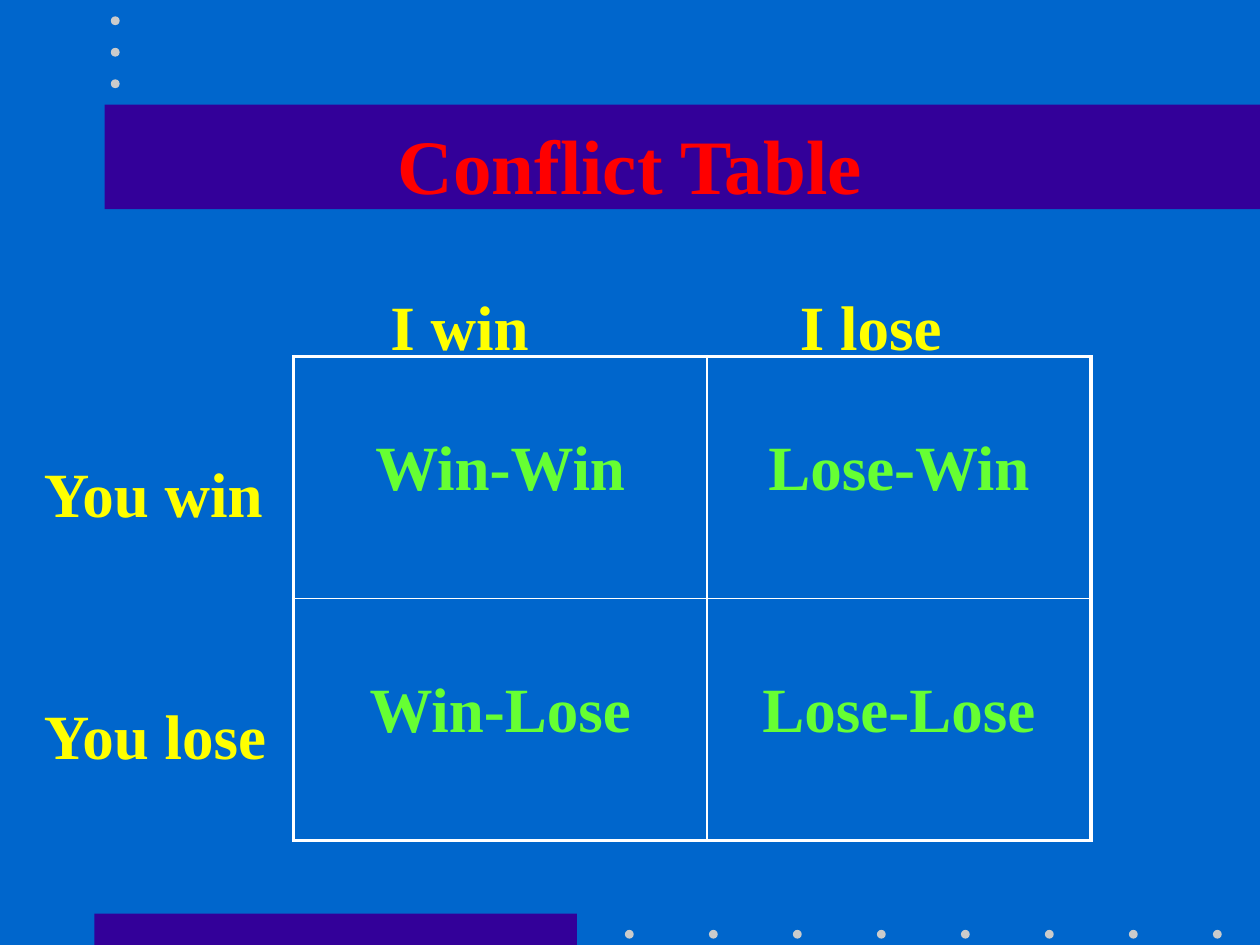
from pptx import Presentation
from pptx.util import Inches, Pt
from pptx.dml.color import RGBColor
from pptx.enum.shapes import MSO_SHAPE as Shape
from pptx.enum.text import MSO_ANCHOR as Anchor, PP_ALIGN as Align
from lxml.etree import fromstring

BLUE = RGBColor(0x00, 0x66, 0xCC)
PURPLE = RGBColor(0x33, 0x00, 0x99)
GRAY = RGBColor(0xCB, 0xCB, 0xCB)
RED = RGBColor(0xFF, 0x00, 0x00)
YELLOW = RGBColor(0xFF, 0xFF, 0x00)
GREEN = RGBColor(0x66, 0xFF, 0x33)
NS = "http://schemas.openxmlformats.org/drawingml/2006/main"

deck = Presentation()
deck.slide_width = Inches(10)
deck.slide_height = Inches(7.5)
slide = deck.slides.add_slide(deck.slide_layouts[6])
slide.background.fill.solid()
slide.background.fill.fore_color.rgb = BLUE
shapes = slide.shapes


def draw(kind, box, color):
    shape = shapes.add_shape(kind, *map(Inches, box))
    shape.shadow.inherit = False
    shape.fill.solid()
    shape.fill.fore_color.rgb = color
    shape.line.fill.background()


def write(frame, text, size, color, align):
    para = frame.paragraphs[0]
    para.text = text
    para.alignment = align
    font = para.font
    font.name = "Times New Roman"
    font.size = Pt(size)
    font.bold = True
    font.color.rgb = color


draw(Shape.RECTANGLE, (0.75, 7.25, 3.83, 0.25), PURPLE)
draw(Shape.RECTANGLE, (0.83, 0.83, 9.17, 0.83), PURPLE)
dots = [(4.96 + i * 2 / 3, 7.38) for i in range(8)]
dots += [(0.88, 0.13 + i * 0.25) for i in range(3)]
for x, y in dots:
    draw(Shape.OVAL, (x, y, 0.07, 0.07), GRAY)

title = shapes.add_textbox(Inches(0.75), Inches(0.67), Inches(8.5), Inches(1.25))
title.text_frame.word_wrap = True
title.text_frame.vertical_anchor = Anchor.MIDDLE
write(title.text_frame, "Conflict Table", 44, RED, Align.CENTER)

table = shapes.add_table(
    2, 2, Inches(2.33), Inches(2.83), Inches(6.33), Inches(3.84)
).table
table.first_row = False
table.horz_banding = False
for col, width in zip(table.columns, (3.28, 3.05)):
    col.width = Inches(width)
for row in table.rows:
    row.height = Inches(1.92)

words = [["Win-Win", "Lose-Win"], ["Win-Lose", "Lose-Lose"]]
for r, line in enumerate(words):
    for c, text in enumerate(line):
        cell = table.cell(r, c)
        cell.margin_top = Inches(0.62)
        write(cell.text_frame, text, 36, GREEN, Align.CENTER)
        outer = {"lnL": c == 0, "lnR": c == 1, "lnT": r == 0, "lnB": r == 1}
        props = cell._tc.get_or_add_tcPr()
        for side, thick in outer.items():
            width = Pt(2.25 if thick else 1)
            props.append(fromstring(
                f'<a:{side} xmlns:a="{NS}" w="{width}"><a:solidFill>'
                f'<a:srgbClr val="FFFFFF"/></a:solidFill></a:{side}>'
            ))
        cell.fill.background()

labels = [
    ("I win", 3, 2.17, 1.5),
    ("I lose", 6.25, 2.17, 1.33),
    ("You win", 0.25, 3.5, 2.25),
    ("You lose", 0.25, 5.42, 2.33),
]
for text, x, y, width in labels:
    label = shapes.add_textbox(Inches(x), Inches(y), Inches(width), Inches(0.7))
    frame = label.text_frame
    frame.word_wrap = True
    frame.margin_top = Inches(0.11)
    frame.margin_bottom = 0
    write(frame, text, 36, YELLOW, Align.LEFT)

deck.save("out.pptx")
